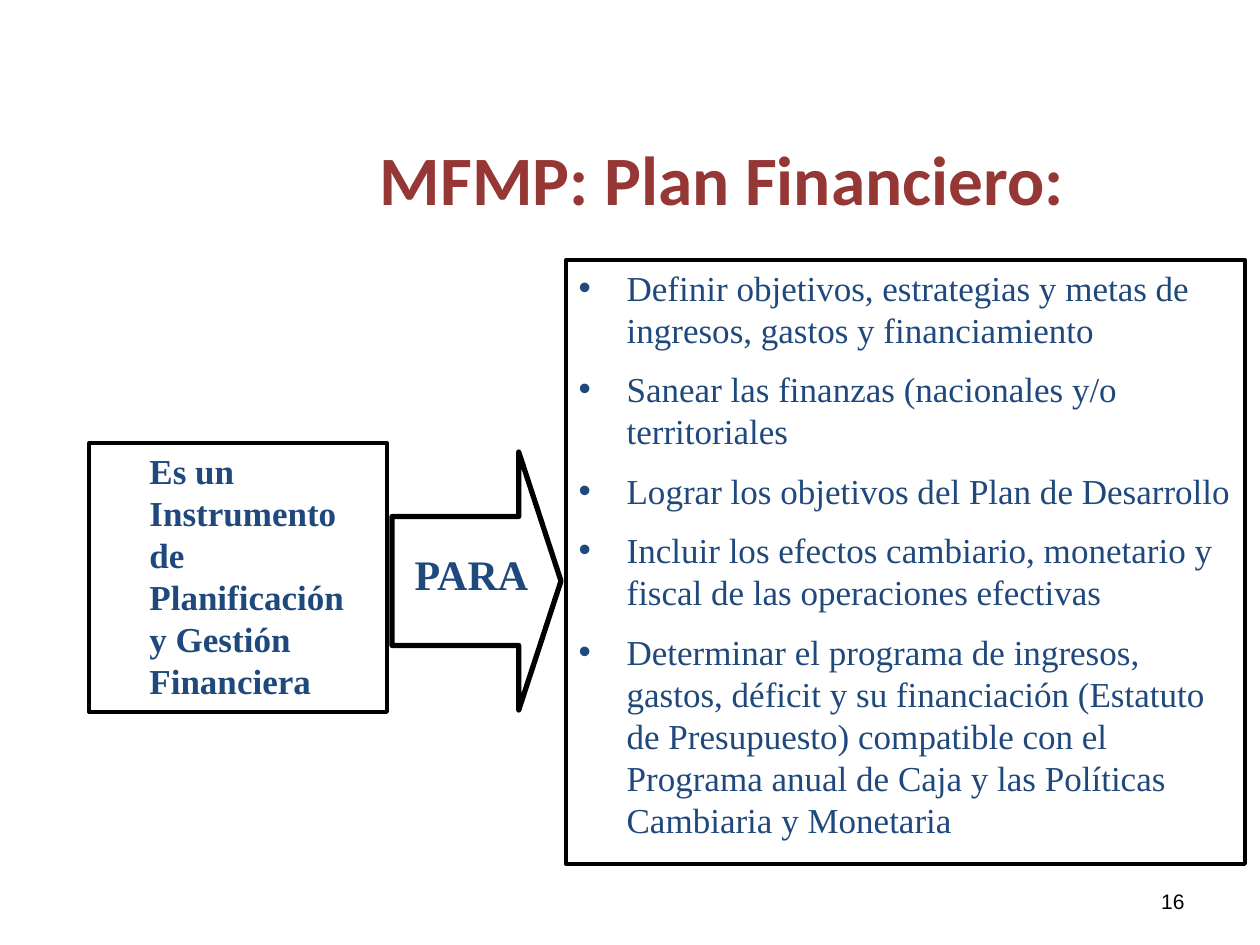
from lxml import etree
from pptx import Presentation
from pptx.dml.color import RGBColor
from pptx.enum.shapes import MSO_SHAPE
from pptx.enum.text import MSO_ANCHOR, MSO_AUTO_SIZE, PP_ALIGN
from pptx.oxml.ns import qn
from pptx.util import Pt

PX = 914400 / 126
RED = RGBColor(0x95, 0x37, 0x35)
BLUE = RGBColor(0x1F, 0x49, 0x7D)
BLACK = RGBColor(0, 0, 0)
SERIF = "Times New Roman"
INDENT = 48


def px(*lengths):
    return [round(n * PX) for n in lengths]


def write(tf, *texts, size=20, font=SERIF, color=BLUE, bold=False,
          align=PP_ALIGN.LEFT, anchor=MSO_ANCHOR.TOP, indent=0, bullet=None):
    tf.word_wrap = True
    tf.auto_size = MSO_AUTO_SIZE.NONE
    tf.vertical_anchor = anchor
    for i, text in enumerate(texts):
        p = tf.paragraphs[0] if i == 0 else tf.add_paragraph()
        p.alignment = align
        p.space_before = Pt(size / 2 if i else 0)
        pPr = p._p.get_or_add_pPr()
        pPr.set("marL", str(px(indent)[0]))
        pPr.set("indent", str(px(-indent if bullet else 0)[0]))
        if bullet:
            etree.SubElement(pPr, qn("a:buChar")).set("char", bullet)
        r = p.add_run()
        r.text = text
        r.font.size = Pt(size)
        r.font.name = font
        r.font.bold = bold
        r.font.color.rgb = color


prs = Presentation()
prs.slide_width, prs.slide_height = px(1260, 945)
s = prs.slides.add_slide(prs.slide_layouts[1])

# Title
title = s.shapes.title
title.left, title.top, title.width, title.height = px(268, 90, 908, 176)
write(title.text_frame, "MFMP: Plan Financiero:", size=39.6, font="Calibri",
      color=RED, bold=True, align=PP_ALIGN.CENTER, anchor=MSO_ANCHOR.MIDDLE)

# Slide number
sp = s.shapes.add_textbox(*px(903, 876, 294, 50))
write(sp.text_frame, "16", size=12, font="Arial", color=BLACK,
      align=PP_ALIGN.RIGHT, anchor=MSO_ANCHOR.MIDDLE)

# Definition box
definition = s.shapes.add_shape(MSO_SHAPE.RECTANGLE, *px(89, 443, 298, 269))
definition.text_frame.margin_right = px(30)[0]
write(definition.text_frame,
      "Es un Instrumento de Planificación y Gestión Financiera",
      bold=True, indent=INDENT)

# List of purposes
purposes = s.placeholders[1]
purposes.left, purposes.top, purposes.width, purposes.height = px(566, 260, 679, 604)
write(purposes.text_frame,
      "Definir objetivos, estrategias y metas de ingresos, gastos y financiamiento",
      "Sanear las finanzas (nacionales y/o territoriales",
      "Lograr los objetivos del Plan de Desarrollo",
      "Incluir los efectos cambiario, monetario y fiscal de las operaciones efectivas",
      "Determinar el programa de ingresos, gastos, déficit y su financiación "
      "(Estatuto de Presupuesto) compatible con el Programa anual de Caja y las "
      "Políticas Cambiaria y Monetaria",
      indent=INDENT, bullet="•")

# Arrow and its label
arrow = s.shapes.add_shape(MSO_SHAPE.RIGHT_ARROW, *px(392, 452, 169, 258))
arrow.adjustments[0] = 0.5
arrow.adjustments[1] = 0.25
sp = s.shapes.add_textbox(*px(392, 542, 159, 63))
write(sp.text_frame, "PARA", size=24, bold=True, align=PP_ALIGN.CENTER)

# Black outlines without fill
for sp, width in ((definition, 2.25), (purposes, 2.25), (arrow, 3)):
    sp.fill.background()
    sp.line.color.rgb = BLACK
    sp.line.width = Pt(width)
for sp in (definition, arrow):
    sp.shadow.inherit = False

prs.save("out.pptx")
